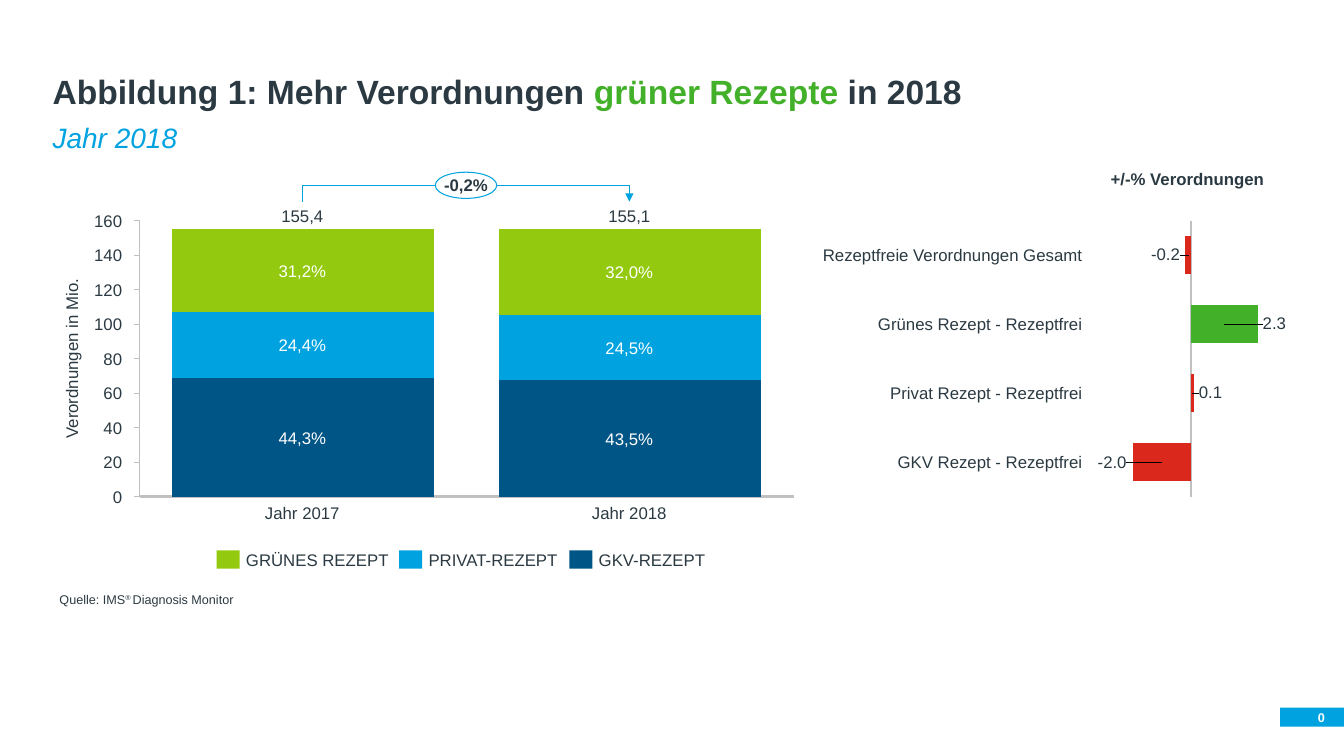
from lxml.etree import SubElement
from pptx import Presentation
from pptx.chart.data import CategoryChartData
from pptx.dml.color import RGBColor
from pptx.enum.chart import XL_CHART_TYPE, XL_TICK_LABEL_POSITION, XL_TICK_MARK
from pptx.enum.shapes import MSO_CONNECTOR, MSO_SHAPE
from pptx.enum.text import MSO_ANCHOR, MSO_AUTO_SIZE, PP_ALIGN
from pptx.oxml import parse_xml
from pptx.oxml.ns import nsdecls, qn
from pptx.util import Cm, Pt

COLORS = {
    "text": "2B3A42", "white": "FFFFFF", "axis": "C0C0C0",
    "gkv": "005587", "privat": "00A3E0", "gruen": "93C90E",
    "plus": "43B02A", "minus": "DA291C",
}
FONT = "Arial"


def rgb(name):
    return RGBColor.from_string(COLORS[name])


def write(paragraph, text, size=12, color="text", bold=False, italic=False, superscript=False):
    run = paragraph.add_run()
    run.text = text
    run.font.name = FONT
    run.font.size = Pt(size)
    run.font.bold = bold
    run.font.italic = italic
    run.font.color.rgb = rgb(color)
    if superscript:
        run.font._element.set("baseline", "30000")


def manual_layout(**values):
    inner = "".join(f'<c:{name} val="{value}"/>' for name, value in values.items())
    return parse_xml(f'<c:layout {nsdecls("c")}><c:manualLayout>{inner}</c:manualLayout></c:layout>')


class SlideBuilder:
    def __init__(self, slide):
        self.slide = slide

    def placeholder(self, index, box, parts, anchor, **style):
        shape = self.slide.placeholders[index]
        shape.left, shape.top, shape.width, shape.height = map(Cm, box)
        frame = shape.text_frame
        frame.auto_size = MSO_AUTO_SIZE.NONE
        frame.vertical_anchor = anchor
        paragraph = frame.paragraphs[0]
        properties = paragraph._p.get_or_add_pPr()
        properties.set("marL", "0")
        properties.set("indent", "0")
        SubElement(properties, qn("a:buNone"))
        paragraph.alignment = PP_ALIGN.LEFT
        paragraph.line_spacing = 0.9
        paragraph.space_before = Pt(0)
        for text, color in parts:
            write(paragraph, text, color=color, **style)

    def frame(self, shape, align, wrap=False):
        frame = shape.text_frame
        frame.margin_left = frame.margin_right = frame.margin_top = frame.margin_bottom = 0
        frame.word_wrap = wrap
        frame.vertical_anchor = MSO_ANCHOR.MIDDLE
        frame.paragraphs[0].alignment = align
        return frame

    def text(self, text, left, middle, width, align=PP_ALIGN.CENTER, height=0.5, **style):
        """Text box centred vertically on the line at middle."""
        box = self.slide.shapes.add_textbox(Cm(left), Cm(middle - height / 2), Cm(width), Cm(height))
        frame = self.frame(box, align)
        write(frame.paragraphs[0], text, **style)
        return frame

    def shape(self, kind, box, fill, line=None):
        shape = self.slide.shapes.add_shape(kind, *map(Cm, box))
        shape.shadow.inherit = False
        shape.fill.solid()
        shape.fill.fore_color.rgb = rgb(fill)
        if line:
            shape.line.color.rgb = rgb(line)
            shape.line.width = Pt(0.75)
        else:
            shape.line.fill.background()
        return shape

    def line(self, start, end, arrow=False):
        line = self.slide.shapes.add_connector(MSO_CONNECTOR.STRAIGHT, *map(Cm, (*start, *end)))
        line.line.color.rgb = rgb("privat")
        line.line.width = Pt(1)
        if arrow:
            SubElement(line.line._get_or_add_ln(), qn("a:tailEnd"), type="triangle")
        SubElement(line._element.spPr, qn("a:effectLst"))

    def chart(self, kind, box, categories, series, colors, gap, limits, plot_box, axis_width):
        data = CategoryChartData(number_format="0.0")
        data.categories = categories
        for name, values in series:
            data.add_series(name, values)
        chart = self.slide.shapes.add_chart(kind, *map(Cm, box), data).chart
        chart.has_legend = chart.has_title = False
        chart.font.name = FONT
        chart.font.size = Pt(12)
        chart.font.color.rgb = rgb("text")
        plot = chart.plots[0]
        plot.gap_width, plot.overlap, plot.vary_by_categories = gap, 100, False
        for item, color in zip(plot.series, colors):
            item.invert_if_negative = False
            item.format.fill.solid()
            item.format.fill.fore_color.rgb = rgb(color)
        for axis, width in ((chart.category_axis, axis_width), (chart.value_axis, 0.75)):
            axis.has_major_gridlines = False
            axis.major_tick_mark = axis.minor_tick_mark = XL_TICK_MARK.NONE
            axis.tick_label_position = XL_TICK_LABEL_POSITION.NONE
            axis.format.line.color.rgb = rgb("axis")
            axis.format.line.width = Pt(width)
        chart.value_axis.minimum_scale, chart.value_axis.maximum_scale = limits
        plot_area = chart._chartSpace.chart.plotArea
        for layout in plot_area.findall(qn("c:layout")):
            plot_area.remove(layout)
        plot_area.insert(0, manual_layout(
            layoutTarget="inner", xMode="edge", yMode="edge", **dict(zip("xywh", plot_box))))
        return chart


def label_points(series, offsets):
    """Place value labels beside the bars, with leader lines."""
    labels = series.data_labels
    labels.show_value = True
    for index, offset in enumerate(offsets):
        font = series.points[index].data_label.font
        font.name, font.size = FONT, Pt(12)
        font.color.rgb = rgb("text")
        label = labels._element.findall(qn("c:dLbl"))[index]
        label.find(qn("c:idx")).addnext(manual_layout(x=offset, y=0))
    labels._element.append(parse_xml(
        f'<c:extLst {nsdecls("c")}><c:ext uri="{{CE6537A1-D6FC-4f65-9D91-7224C49458BB}}" '
        'xmlns:c15="http://schemas.microsoft.com/office/drawing/2012/chart">'
        '<c15:showLeaderLines val="1"/></c:ext></c:extLst>'))


def main():
    presentation = Presentation()
    presentation.slide_width, presentation.slide_height = Cm(33.87), Cm(19.05)
    slide = presentation.slides.add_slide(presentation.slide_layouts[1])
    builder = SlideBuilder(slide)

    # Title and subtitle
    builder.placeholder(0, (1.07, 0.81, 31.5, 2.13), [
        ("Abbildung 1: Mehr Verordnungen ", "text"), ("grüner Rezepte", "plus"), (" in 2018", "text"),
    ], MSO_ANCHOR.BOTTOM, size=24, bold=True)
    builder.placeholder(1, (1.07, 3, 31.5, 1.12), [("Jahr 2018", "privat")],
                        MSO_ANCHOR.TOP, size=20, italic=True)

    # Stacked columns with value axis
    columns = builder.chart(
        XL_CHART_TYPE.COLUMN_STACKED, (3.28, 5.33, 16.94, 7.42), ["1", "2"],
        [("GKV-Rezept", (100, 98)), ("Privat-Rezept", (55, 55)), ("Grünes Rezept", (70, 72))],
        ["gkv", "privat", "gruen"], 25, (0, 232), (0.014, 0.031, 0.973, 0.938), 2.25)
    columns.value_axis.major_unit = 29
    columns.value_axis.major_tick_mark = XL_TICK_MARK.OUTSIDE
    for step in range(9):
        builder.text(str(step * 20), 2.1, 12.52 - step * 0.87, 0.98, PP_ALIGN.RIGHT)
    axis_title = builder.text("Verordnungen in Mio.", 1.55, 9.04, 0.5, height=4.01)
    axis_title._txBody.bodyPr.set("vert", "vert270")

    # Column labels: total, segments from the top, year
    column_labels = [
        (7.62, [("155,4", 5.44), ("31,2%", 6.83), ("24,4%", 8.69), ("44,3%", 11.04), ("Jahr 2017", 12.93)]),
        (15.86, [("155,1", 5.44), ("32,0%", 6.86), ("24,5%", 8.76), ("43,5%", 11.05), ("Jahr 2018", 12.93)]),
    ]
    for center, labels in column_labels:
        for text, middle in labels:
            builder.text(text, center - 1, middle, 2, color="white" if "%" in text else "text")

    # Change between the years
    start, end, top, bottom = 7.62, 15.86, 4.67, 5.08
    builder.line((start, bottom), (start, top))
    builder.line((start, top), (end, top))
    builder.line((end, top), (end, bottom), arrow=True)
    change = builder.shape(MSO_SHAPE.OVAL, (10.97, 4.34, 1.55, 0.66), "white", "privat")
    write(builder.frame(change, PP_ALIGN.CENTER).paragraphs[0], "-0,2%", bold=True)

    # Legend
    for text, color, left in (("GRÜNES REZEPT", "gruen", 5.46), ("PRIVAT-REZEPT", "privat", 10.06),
                              ("GKV-REZEPT", "gkv", 14.35)):
        builder.shape(MSO_SHAPE.RECTANGLE, (left, 13.87, 0.58, 0.46), color)
        builder.text(text, left + 0.74, 14.1, 3.6, PP_ALIGN.LEFT)

    # Change by type of prescription
    builder.text("+/-% Verordnungen", 27.99, 4.5, 4.3, PP_ALIGN.LEFT, bold=True)
    names = ["Rezeptfreie Verordnungen Gesamt", "Grünes Rezept - Rezeptfrei",
             "Privat Rezept - Rezeptfrei", "GKV Rezept - Rezeptfrei"]
    bars = builder.chart(
        XL_CHART_TYPE.BAR_STACKED, (27.28, 5.33, 5.69, 7.42), names,
        [("+/-% Verordnungen", (-0.2, 2.3, 0.1, -2))], ["minus"], 80, (-2, 2.3),
        (0.222, 0.031, 0.557, 0.938), 1.5)
    bars.category_axis.reverse_order = True
    bars.value_axis.visible = False
    changes = bars.plots[0].series[0]
    growth = changes.points[1].format.fill
    growth.solid()
    growth.fore_color.rgb = rgb("plus")
    label_points(changes, (-0.1, 0.22, 0.08, -0.22))
    for row, name in enumerate(names):
        builder.text(name, 20.28, 6.43 + row * 1.74, 7, PP_ALIGN.RIGHT)

    # Source and page number
    source = builder.text("Quelle: IMS", 1.5, 15.1, 19.05, PP_ALIGN.LEFT, height=0.38, size=9)
    source.word_wrap = True
    write(source.paragraphs[0], "® ", size=9, superscript=True)
    write(source.paragraphs[0], "Diagnosis Monitor", size=9)
    page = builder.shape(MSO_SHAPE.RECTANGLE, (32.26, 17.83, 1.61, 0.48), "privat")
    page_frame = builder.frame(page, PP_ALIGN.RIGHT, wrap=True)
    page_frame.margin_right = Cm(0.48)
    write(page_frame.paragraphs[0], "0", size=9, color="white", bold=True)

    presentation.save("out.pptx")


if __name__ == "__main__":
    main()
